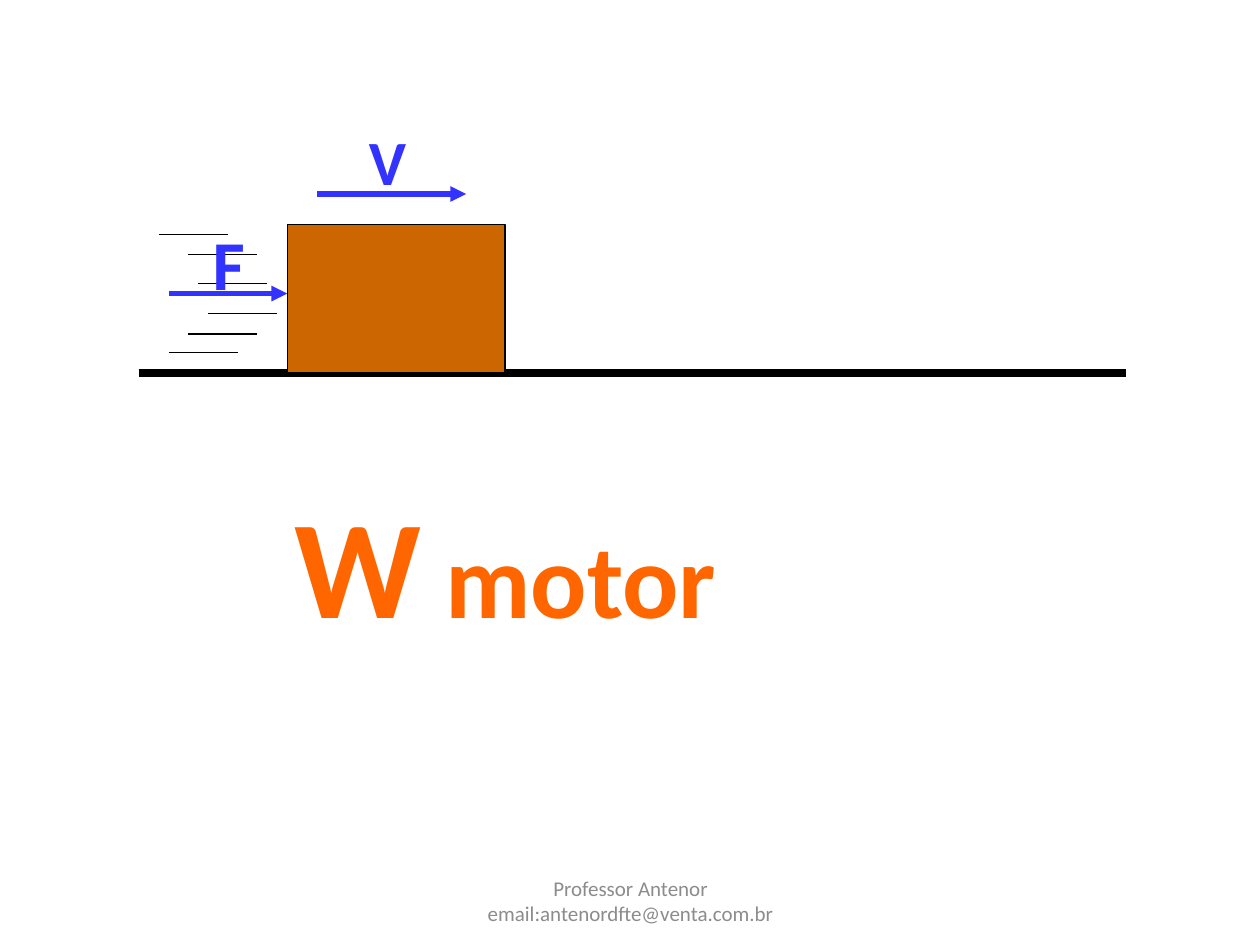
from typing import NamedTuple

import pptx
import pptx.dml.color
import pptx.enum.shapes
import pptx.enum.text
import pptx.oxml
import pptx.oxml.ns
import pptx.util
from pptx.util import Inches

BLACK, BLUE, BROWN, ORANGE, GRAY = "000000", "3333FF", "CC6600", "FF6600", "8C8C8C"
SPEED_LINE_LENGTH = 0.55


class Span(NamedTuple):
    text: str
    size: float


class Label(NamedTuple):
    left: float
    top: float
    width: float
    height: float
    spans: list[Span]
    color: str
    bold: bool = True
    centered: bool = False


class Line(NamedTuple):
    """A horizontal line; weight is in points."""
    left: float
    right: float
    height: float
    color: str = BLACK
    weight: float = 0.75
    arrow: bool = False


GROUND = Line(1.1, 8.94, 2.96, weight=5)
SPEED_LINES = [
    Line(left, left + SPEED_LINE_LENGTH, height)
    for left, height in [(1.26, 1.86), (1.49, 2.02), (1.57, 2.25),
                         (1.65, 2.49), (1.49, 2.65), (1.34, 2.8)]
]
VELOCITY = Line(2.52, 3.7, 1.54, BLUE, 3, True)
FORCE = Line(1.34, 2.28, 2.33, BLUE, 3, True)

WORK_LABEL = Label(2.24, 3.75, 3.84, 1.43, [Span("W", 80), Span(" motor", 60)], ORANGE)
VELOCITY_LABEL = Label(2.83, 0.92, 0.53, 0.7, [Span("V", 36)], BLUE)
FORCE_LABEL = Label(1.59, 1.7, 0.54, 0.77, [Span("F", 40)], BLUE)
FOOTER = Label(3.42, 6.95, 3.17, 0.4,
               [Span("Professor Antenor email:antenordfte@venta.com.br", 12)],
               GRAY, bold=False, centered=True)


def rgb(value: str) -> pptx.dml.color.RGBColor:
    return pptx.dml.color.RGBColor.from_string(value)


def draw_line(page, line: Line) -> None:
    connector = page.shapes.add_connector(
        pptx.enum.shapes.MSO_CONNECTOR.STRAIGHT,
        Inches(line.left), Inches(line.height), Inches(line.right), Inches(line.height))
    connector.line.color.rgb = rgb(line.color)
    connector.line.width = pptx.util.Pt(line.weight)
    if line.arrow:
        head = pptx.oxml.parse_xml(
            f'<a:tailEnd {pptx.oxml.ns.nsdecls("a")} type="triangle"/>')
        connector.line._get_or_add_ln().append(head)
    connector._element.spPr.append(
        pptx.oxml.parse_xml(f'<a:effectLst {pptx.oxml.ns.nsdecls("a")}/>'))


def draw_block(page) -> None:
    block = page.shapes.add_shape(
        pptx.enum.shapes.MSO_SHAPE.RECTANGLE,
        Inches(2.28), Inches(1.78), Inches(1.73), Inches(1.18))
    block.shadow.inherit = False
    block.fill.solid()
    block.fill.fore_color.rgb = rgb(BROWN)
    block.line.color.rgb = rgb(BLACK)
    block.line.width = pptx.util.Pt(0.75)


def draw_label(page, label: Label) -> None:
    box = page.shapes.add_textbox(
        Inches(label.left), Inches(label.top), Inches(label.width), Inches(label.height))
    frame = box.text_frame
    frame.word_wrap = label.centered
    para = frame.paragraphs[0]
    if label.centered:
        frame.vertical_anchor = pptx.enum.text.MSO_ANCHOR.MIDDLE
        para.alignment = pptx.enum.text.PP_ALIGN.CENTER
    else:
        frame.auto_size = pptx.enum.text.MSO_AUTO_SIZE.SHAPE_TO_FIT_TEXT
    for span in label.spans:
        run = para.add_run()
        run.text = span.text
        formats = {"name": "Calibri", "size": pptx.util.Pt(span.size), "bold": label.bold}
        for attribute, value in formats.items():
            setattr(run.font, attribute, value)
        run.font.color.rgb = rgb(label.color)


def main() -> None:
    deck = pptx.Presentation()
    deck.slide_width, deck.slide_height = Inches(10), Inches(7.5)
    page = deck.slides.add_slide(deck.slide_layouts.get_by_name("Blank"))

    draw_line(page, GROUND)
    draw_label(page, WORK_LABEL)
    draw_line(page, VELOCITY)
    draw_label(page, VELOCITY_LABEL)
    draw_block(page)
    for line in [*SPEED_LINES, FORCE]:
        draw_line(page, line)
    draw_label(page, FORCE_LABEL)
    draw_label(page, FOOTER)
    deck.save("out.pptx")


if __name__ == "__main__":
    main()
